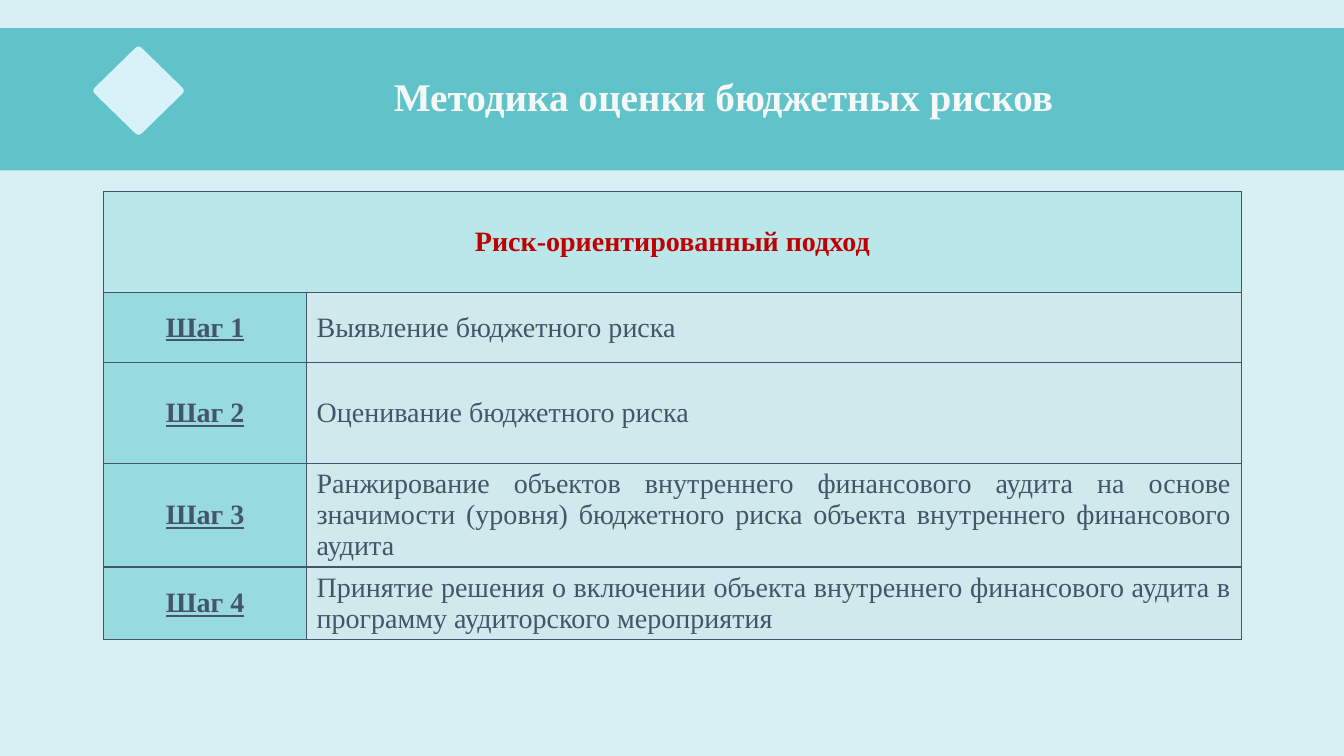
from lxml.etree import SubElement
from pptx import Presentation
from pptx.dml.color import RGBColor
from pptx.enum.shapes import MSO_SHAPE as Preset
from pptx.enum.text import MSO_ANCHOR as Anchor, MSO_AUTO_SIZE as AutoSize, PP_ALIGN as Align
from pptx.oxml.ns import qn
from pptx.util import Inches, Pt

COLUMNS, ROWS = 100, 75
STEPS = [
    "Выявление бюджетного риска",
    "Оценивание бюджетного риска",
    "Ранжирование объектов внутреннего финансового аудита на основе значимости "
    "(уровня) бюджетного риска объекта внутреннего финансового аудита",
    "Принятие решения о включении объекта внутреннего финансового аудита "
    "в программу аудиторского мероприятия",
]


def rgb(value):
    return RGBColor.from_string(value)


class StepsSlide:
    font = "Times New Roman"
    ink, accent, heading = "445469", "C00000", "F6F8F8"
    backdrop, band_fill, gem_fill = "D8F0F3", "60C3C9", "D7F3F9"
    header_fill, label_fill, step_fill = "B9E7EA", "97DBDF", "D0E9EC"

    def __init__(self, deck):
        self.column = deck.slide_width / COLUMNS
        self.row = deck.slide_height / ROWS
        self.slide = deck.slides.add_slide(deck.slide_layouts[5])
        self.shapes = self.slide.shapes
        fill = self.slide.background.fill
        fill.solid()
        fill.fore_color.rgb = rgb(self.backdrop)

    def x(self, columns):
        return round(columns * self.column)

    def y(self, rows):
        return round(rows * self.row)

    def box(self, left, top, width, height):
        return self.x(left), self.y(top), self.x(width), self.y(height)

    def paint(self, shape, color):
        shape.shadow.inherit = False
        shape.fill.solid()
        shape.fill.fore_color.rgb = rgb(color)
        shape.line.fill.background()

    def add_text(self, frame, text, size, color, align, bold=False, underline=False):
        paragraph = frame.paragraphs[0]
        paragraph.alignment = align
        run = paragraph.add_run()
        run.text = text
        run.font.name = self.font
        run.font.size = Pt(size)
        run.font.bold = bold
        run.font.underline = underline
        run.font.color.rgb = rgb(color)

    def band(self, *place):
        band = self.shapes.add_shape(Preset.RECTANGLE, *self.box(*place))
        self.paint(band, self.band_fill)
        self.shapes.title.element.addprevious(band.element)

    def title(self, text, *place):
        title = self.shapes.title
        title.left, title.top, title.width, title.height = self.box(*place)
        frame = title.text_frame
        frame.word_wrap = True
        frame.auto_size = AutoSize.NONE
        frame.vertical_anchor = Anchor.TOP
        self.add_text(frame, text, 28, self.heading, Align.CENTER, bold=True)

    def rounded_diamond(self, center_x, center_y, half_width, half_height, cut=0.075, arc=6):
        tips = [(0, -1), (1, 0), (0, 1), (-1, 0)]
        outline = []
        for i, tip in enumerate(tips):
            before, after = tips[i - 1], tips[(i + 1) % 4]
            for j in range(arc + 1):
                t = j / arc
                pull_before, pull_after = cut * (1 - t) ** 2, cut * t ** 2
                across, down = (
                    c + pull_before * (b - c) + pull_after * (a - c)
                    for b, c, a in zip(before, tip, after)
                )
                outline.append((self.x(center_x + half_width * across),
                                self.y(center_y + half_height * down)))
        builder = self.shapes.build_freeform(*outline[0])
        builder.add_line_segments(outline[1:], close=True)
        self.paint(builder.convert_to_shape(), self.gem_fill)

    def cell(self, cell, fill):
        cell.fill.solid()
        cell.fill.fore_color.rgb = rgb(fill)
        cell.vertical_anchor = Anchor.MIDDLE
        properties = cell._tc.get_or_add_tcPr()
        for position, side in enumerate(("lnL", "lnR", "lnT", "lnB")):
            border = SubElement(properties, qn(f"a:{side}"), w=str(Pt(1)))
            SubElement(SubElement(border, qn("a:solidFill")), qn("a:srgbClr"), val=self.ink)
            properties.insert(position, border)
        return cell.text_frame

    def steps_table(self, header, steps, left, top, widths, heights):
        place = self.box(left, top, sum(widths), sum(heights))
        table = self.shapes.add_table(len(heights), len(widths), *place).table
        table.first_row = table.horz_banding = False
        for column, width in zip(table.columns, widths):
            column.width = self.x(width)
        for row, height in zip(table.rows, heights):
            row.height = self.y(height)
        table.cell(0, 0).merge(table.cell(0, 1))
        header_frame, _ = [self.cell(table.cell(0, i), self.header_fill) for i in range(2)]
        self.add_text(header_frame, header, 20, self.accent, Align.CENTER, bold=True)
        for number, step in enumerate(steps, 1):
            label = self.cell(table.cell(number, 0), self.label_fill)
            self.add_text(label, f"Шаг {number}", 20, self.ink, Align.CENTER, True, True)
            description = self.cell(table.cell(number, 1), self.step_fill)
            self.add_text(description, step, 20, self.ink, Align.JUSTIFY)


def main():
    deck = Presentation()
    deck.slide_width, deck.slide_height = Inches(13.33), Inches(7.5)
    page = StepsSlide(deck)
    page.steps_table("Риск-ориентированный подход", STEPS, 7.73, 19,
                     widths=(15.08, 69.54), heights=(10, 7, 10, 10.2, 7.1))
    page.band(0, 2.8, COLUMNS, 14.1)
    page.title("Методика оценки бюджетных рисков", 8.55, 6.7, 90.55, 12.4)
    page.rounded_diamond(10.31, 9, 3.49, 4.54)
    deck.save("out.pptx")


if __name__ == "__main__":
    main()
